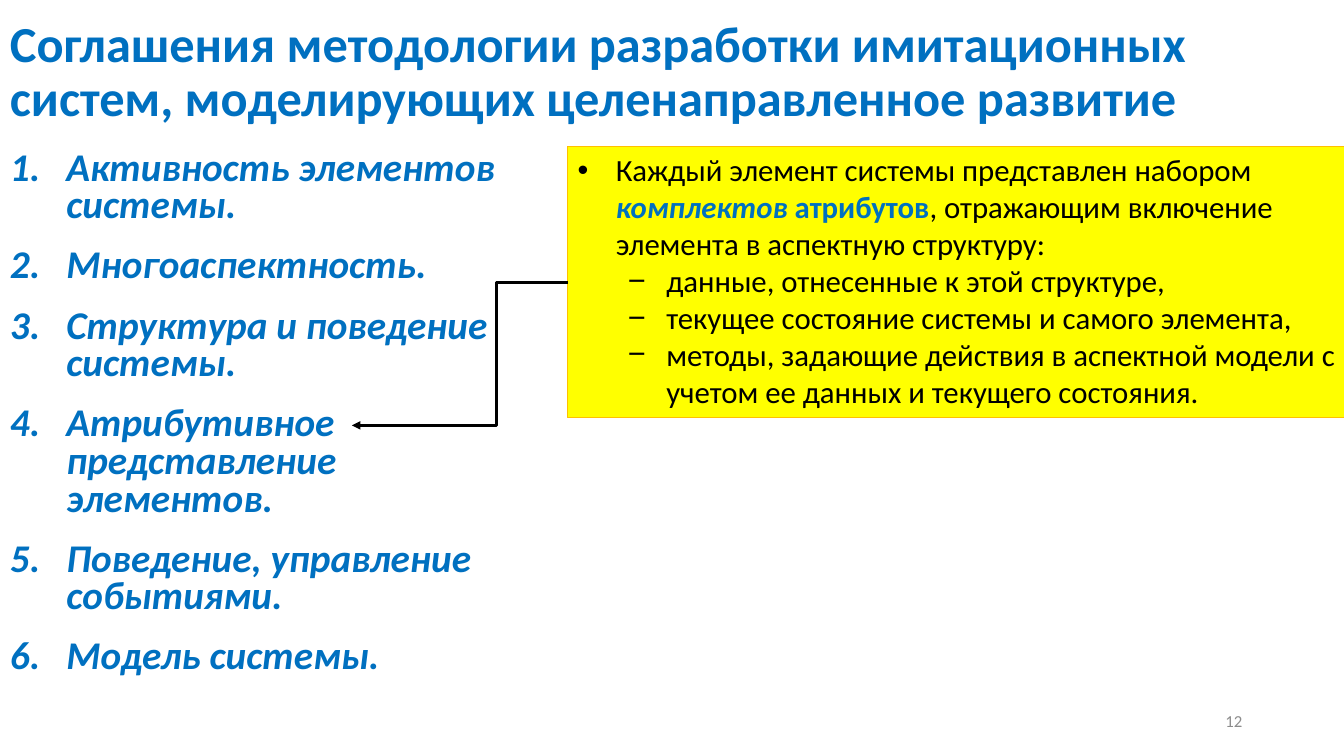
from pptx import Presentation
from pptx.dml.color import RGBColor
from pptx.enum.shapes import MSO_CONNECTOR, MSO_SHAPE
from pptx.enum.text import MSO_ANCHOR, PP_ALIGN
from pptx.oxml.ns import qn
from pptx.util import Inches, Pt
from lxml import etree

ELBOW = MSO_CONNECTOR.ELBOW
RECT = MSO_SHAPE.RECTANGLE
TOP, MIDDLE = MSO_ANCHOR.TOP, MSO_ANCHOR.MIDDLE
LEFT, RIGHT = PP_ALIGN.LEFT, PP_ALIGN.RIGHT

COLORS = {"blue": "0070C0", "yellow": "FFFF00", "gold": "FFC000",
          "black": "000000", "gray": "8C8C8C"}

TITLE = ("Соглашения методологии разработки имитационных систем, "
         "моделирующих целенаправленное развитие")
AGREEMENTS = [
    "Активность элементов \nсистемы.",
    "Многоаспектность.",
    "Структура и поведение\nсистемы.",
    "Атрибутивное \nпредставление \nэлементов.",
    "Поведение, управление \nсобытиями.",
    "Модель системы.",
]
ATTRIBUTE_SETS = [
    ("Каждый элемент системы представлен набором ", {}),
    ("комплектов", {"color": "blue", "bold": True, "italic": True}),
    (" атрибутов", {"color": "blue", "bold": True}),
    (", отражающим включение элемента в аспектную структуру:", {}),
]
SET_CONTENTS = [
    "данные, отнесенные к этой структуре,",
    "текущее состояние системы и самого элемента,",
    "методы, задающие действия в аспектной модели с учетом ее данных "
    "и текущего состояния.",
]


class SlideBuilder:
    font = "Calibri"

    def __init__(self, slide):
        self.s = slide

    def color(self, name):
        return RGBColor.from_string(COLORS[name])

    def frame(self, sp, anchor):
        tf = sp.text_frame
        tf.word_wrap = True
        tf.vertical_anchor = anchor
        return tf

    def text_box(self, x, y, w, h, anchor=TOP):
        sp = self.s.shapes.add_textbox(Inches(x), Inches(y), Inches(w), Inches(h))
        return self.frame(sp, anchor)

    def panel(self, x, y, w, h, fill, line):
        sp = self.s.shapes.add_shape(RECT, Inches(x), Inches(y), Inches(w), Inches(h))
        sp.shadow.inherit = False
        sp.fill.solid()
        sp.fill.fore_color.rgb = self.color(fill)
        sp.line.color.rgb = self.color(line)
        sp.line.width = Pt(0.75)
        return self.frame(sp, TOP)

    def paragraph(self, tf, align=LEFT, spacing=None, before=0, after=0):
        p = tf.paragraphs[0]
        if p.runs:
            p = tf.add_paragraph()
        p.alignment = align
        p.line_spacing = spacing
        p.space_before, p.space_after = Pt(before), Pt(after)
        return p

    def bullet(self, p, left, hanging, char=None):
        pPr = p._p.get_or_add_pPr()
        pPr.set("marL", str(Inches(left)))
        pPr.set("indent", str(-Inches(hanging)))
        font = etree.SubElement(pPr, qn("a:buFont"))
        font.set("typeface", "Arial" if char else "+mj-lt")
        if char:
            etree.SubElement(pPr, qn("a:buChar")).set("char", char)
        else:
            etree.SubElement(pPr, qn("a:buAutoNum")).set("type", "arabicPeriod")

    def run(self, p, text, size, color="black", bold=False, italic=False):
        for i, line in enumerate(text.split("\n")):
            if i:
                p.add_line_break()
            r = p.add_run()
            r.text = line
            r.font.name = self.font
            r.font.size = Pt(size)
            r.font.bold, r.font.italic = bold, italic
            r.font.color.rgb = self.color(color)

    def elbow_arrow(self, x1, y1, x2, y2, bend, width):
        c = self.s.shapes.add_connector(ELBOW, Inches(x1), Inches(y1),
                                        Inches(x2), Inches(y2))
        c.line.color.rgb = self.color("black")
        c.line.width = Pt(width)
        spPr = c._element.spPr
        guides = spPr.find(qn("a:prstGeom")).find(qn("a:avLst"))
        guide = etree.SubElement(guides, qn("a:gd"))
        guide.set("name", "adj1")
        guide.set("fmla", f"val {round(bend * 100000)}")
        tail = etree.SubElement(c.line._get_or_add_ln(), qn("a:tailEnd"))
        tail.set("type", "triangle")
        etree.SubElement(spPr, qn("a:effectLst"))


def main():
    prs = Presentation()
    prs.slide_width, prs.slide_height = Inches(13.33), Inches(7.5)
    b = SlideBuilder(prs.slides.add_slide(prs.slide_layouts[6]))

    tf = b.text_box(0, 0, 13.09, 1.45, MIDDLE)
    b.run(b.paragraph(tf, spacing=0.9), TITLE, 36, "blue", bold=True)

    tf = b.text_box(0, 1.45, 13.09, 5.34)
    for agreement in AGREEMENTS:
        p = b.paragraph(tf, spacing=0.8, before=10, after=6)
        b.bullet(p, 0.56, 0.56)
        b.run(p, agreement, 28, "blue", bold=True, italic=True)

    tf = b.panel(5.63, 1.45, 7.71, 2.69, "yellow", "gold")
    p = b.paragraph(tf)
    b.bullet(p, 0.38, 0.38, "•")
    for text, style in ATTRIBUTE_SETS:
        b.run(p, text, 22, **style)
    for content in SET_CONTENTS:
        p = b.paragraph(tf)
        p.level = 1
        b.bullet(p, 0.88, 0.38, "−")
        b.run(p, content, 22)

    b.elbow_arrow(5.63, 2.8, 3.49, 4.22, 0.33, 2)

    tf = b.text_box(9.42, 6.95, 3, 0.4, MIDDLE)
    b.run(b.paragraph(tf, RIGHT), "12", 12, "gray")

    prs.save("out.pptx")


if __name__ == "__main__":
    main()
